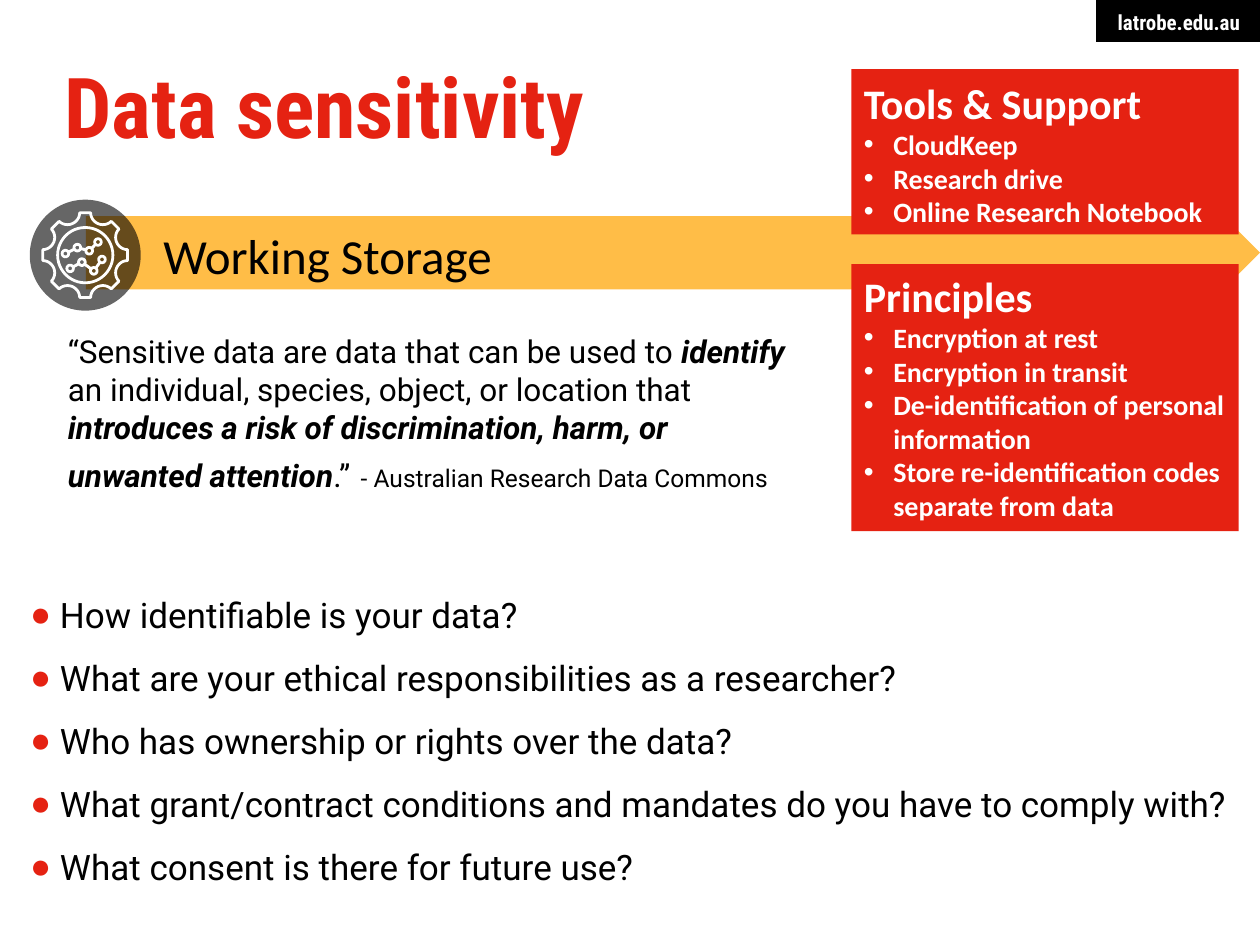
import math
from dataclasses import dataclass, field
from typing import Any

from lxml import etree
from pptx import Presentation
from pptx.dml.color import RGBColor
from pptx.enum.shapes import MSO_SHAPE
from pptx.enum.text import MSO_ANCHOR, PP_ALIGN
from pptx.oxml.ns import qn
from pptx.util import Pt

RECTANGLE, OVAL, ARROW = MSO_SHAPE.RECTANGLE, MSO_SHAPE.OVAL, MSO_SHAPE.RIGHT_ARROW
TOP, BOTTOM = MSO_ANCHOR.TOP, MSO_ANCHOR.BOTTOM
LEFT, CENTER, RIGHT = PP_ALIGN.LEFT, PP_ALIGN.CENTER, PP_ALIGN.RIGHT
COLORS = {"red": "E52212", "amber": "FFBD47", "black": "000000", "white": "FFFFFF"}
ICON_CENTER = (48.7, 145.8)
ICON_LINE = 1.6
NODE_RADIUS, HOLE_RADIUS = 2.7, 1.1
Point = tuple[float, float]


@dataclass
class Box:
    left: float
    top: float
    width: float
    height: float


@dataclass
class TextRun:
    text: str
    size: float
    font: str
    color: str = "black"
    bold: bool = False
    italic: bool = False


@dataclass
class Line:
    runs: list[TextRun]
    bullet: str = ""
    bullet_color: str = ""
    indent: float = 0
    format: dict[str, Any] = field(default_factory=dict)


@dataclass
class Panel:
    box: Box
    heading: str
    items: list[str]
    anchor: Any


def rgb(name: str) -> RGBColor:
    return RGBColor.from_string(COLORS[name])


def lengths(box: Box) -> list[Pt]:
    return [Pt(value) for value in (box.left, box.top, box.width, box.height)]


def circle_box(center: Point, radius: float) -> Box:
    return Box(center[0] - radius, center[1] - radius, 2 * radius, 2 * radius)


def arc(center: Point, radius: float, start: float, sweep: float) -> list[Point]:
    """Return points along an arc; angles are in degrees."""
    angles = [math.radians(start + sweep * step / 12) for step in range(13)]
    return [(center[0] + radius * math.cos(angle), center[1] + radius * math.sin(angle))
            for angle in angles]


def style_shape(shape, fill: str = "", outline: str = "") -> None:
    shape.shadow.inherit = False
    if fill:
        shape.fill.solid()
        shape.fill.fore_color.rgb = rgb(fill)
    else:
        shape.fill.background()
    if outline:
        shape.line.color.rgb = rgb(outline)
        shape.line.width = Pt(ICON_LINE)
    else:
        shape.line.fill.background()


def add_preset(slide, kind, box: Box, fill: str = "", outline: str = ""):
    shape = slide.shapes.add_shape(kind, *lengths(box))
    style_shape(shape, fill, outline)
    return shape


def add_outline(slide, contours: list[list[Point]], fill: str = "", outline: str = "") -> None:
    scaled = [[(Pt(x), Pt(y)) for x, y in contour] for contour in contours]
    builder = slide.shapes.build_freeform(*scaled[0][0])
    for index, contour in enumerate(scaled):
        if index:
            builder.move_to(*contour[0])
        builder.add_line_segments(contour[1:], close=True)
    style_shape(builder.convert_to_shape(), fill, outline)


def add_bullet(paragraph, line: Line) -> None:
    properties = paragraph._p.get_or_add_pPr()
    properties.set("marL", str(Pt(line.indent)))
    properties.set("indent", str(-Pt(line.indent)))
    if line.bullet_color:
        color = etree.SubElement(properties, qn("a:buClr"))
        etree.SubElement(color, qn("a:srgbClr"), val=COLORS[line.bullet_color])
    etree.SubElement(properties, qn("a:buFont"), typeface="Arial")
    etree.SubElement(properties, qn("a:buChar"), char=line.bullet)


def write_text(shape, lines: list[Line], insets=(7.2, 3.6, 7.2, 3.6),
               anchor=TOP, wrap: bool = True) -> None:
    frame = shape.text_frame
    frame.word_wrap, frame.vertical_anchor = wrap, anchor
    for side, inset in zip(("left", "top", "right", "bottom"), insets):
        setattr(frame, f"margin_{side}", Pt(inset))
    for index, line in enumerate(lines):
        paragraph = frame.add_paragraph() if index else frame.paragraphs[0]
        if line.bullet:
            add_bullet(paragraph, line)
        for name, value in {"alignment": LEFT, **line.format}.items():
            setattr(paragraph, name, value)
        for text_run in line.runs:
            run = paragraph.add_run()
            run.text = text_run.text
            values = {"name": text_run.font, "size": Pt(text_run.size),
                      "bold": text_run.bold, "italic": text_run.italic}
            for name, value in values.items():
                setattr(run.font, name, value)
            run.font.color.rgb = rgb(text_run.color)


def add_text(slide, box: Box, lines: list[Line], **options) -> None:
    write_text(slide.shapes.add_textbox(*lengths(box)), lines, **options)


def add_panel(slide, panel: Panel) -> None:
    lines = [Line([TextRun(panel.heading, 24, "Calibri", "white", True)])]
    lines += [Line([TextRun(item, 16, "Calibri", "white", True)], "•", indent=16.9)
              for item in panel.items]
    write_text(add_preset(slide, RECTANGLE, panel.box, "red"), lines, anchor=panel.anchor)


def add_gear(slide, teeth: int = 8) -> None:
    """Outline a gear whose notches are arcs bulging towards its centre."""
    points = []
    for tooth in range(teeth):
        direction = 360 * (tooth + 0.5) / teeth
        notch = arc(ICON_CENTER, 26.4, direction, 0)[0]
        points += arc(notch, 7, direction + 246, -132)
    add_outline(slide, [points], outline="white")


def add_trend(slide, nodes: list[Point], gap: float = 18) -> None:
    """Trace rings joined by bars, there and back, then cut out the holes."""
    route = nodes + nodes[-2:0:-1]
    silhouette = []
    for index, (x, y) in enumerate(route):
        before, after = route[index - 1], route[(index + 1) % len(route)]
        start = math.degrees(math.atan2(before[1] - y, before[0] - x))
        end = math.degrees(math.atan2(after[1] - y, after[0] - x))
        sweep = (end - start) % 360 or 360
        silhouette += arc((x, y), NODE_RADIUS, start + gap, sweep - 2 * gap)
    holes = [arc(node, HOLE_RADIUS, 360, -360) for node in nodes]
    add_outline(slide, [silhouette, *holes], fill="white")


def add_icon(slide) -> None:
    disc = add_preset(slide, OVAL, circle_box(ICON_CENTER, 31.7), "black")
    color = disc._element.spPr.find(qn("a:solidFill"))[0]
    etree.SubElement(color, qn("a:alpha"), val="60000")
    add_gear(slide)
    add_preset(slide, OVAL, circle_box(ICON_CENTER, 15.8), outline="white")
    add_trend(slide, [(40.1, 153.4), (46.8, 149.8), (53.6, 154.8), (58.3, 148.3)])
    add_trend(slide, [(37.4, 144.9), (44.2, 141.5), (51, 143.3), (56, 138.3)])


QUOTE = [
    TextRun("“Sensitive data are data that can be used to ", 18, "Roboto"),
    TextRun("identify", 18, "Roboto", bold=True, italic=True),
    TextRun(" an individual, species, object, or location that ", 18, "Roboto"),
    TextRun("introduces a risk of discrimination, harm, or unwanted attention",
            18, "Roboto", bold=True, italic=True),
    TextRun(".”", 18, "Roboto"),
    TextRun(" ", 24, "Roboto"),
    TextRun("- Australian Research Data Commons", 14, "Roboto"),
]
QUESTIONS = [
    "How identifiable is your data?",
    "What are your ethical responsibilities as a researcher?",
    "Who has ownership or rights over the data?",
    "What grant/contract conditions and mandates do you have to comply with?",
    "What consent is there for future use?",
]
PANELS = [
    Panel(Box(486.5, 150.9, 221.3, 152.6), "Principles",
          ["Encryption at rest", "Encryption in transit",
           "De-identification of personal information",
           "Store re-identification codes separate from data"], TOP),
    Panel(Box(486.5, 39.5, 221.3, 94.5), "Tools & Support",
          ["CloudKeep", "Research drive", "Online Research Notebook"], BOTTOM),
]


def main() -> None:
    presentation = Presentation()
    presentation.slide_width, presentation.slide_height = Pt(720), Pt(540)
    slide = presentation.slides.add_slide(presentation.slide_layouts[6])
    no_insets = (0, 0, 0, 0)
    address = TextRun("latrobe.edu.au", 12, "Roboto Condensed", "white", True)
    write_text(add_preset(slide, RECTANGLE, Box(626.4, 0, 93.6, 24), "black"),
               [Line([address], format={"alignment": RIGHT})],
               insets=(11.3, 5.5, 11.3, 3.6), wrap=False)
    arrow = add_preset(slide, ARROW, Box(49, 123.5, 671, 41.8), "amber")
    arrow.adjustments[0], arrow.adjustments[1] = 1, 0.5
    add_text(slide, Box(82, 128.9, 210.2, 33.8),
             [Line([TextRun("Working Storage", 28, "Calibri")], format={"alignment": CENTER})],
             insets=no_insets)
    add_icon(slide)
    title = TextRun("Data sensitivity", 48, "Roboto Condensed", "red", True)
    add_text(slide, Box(36.9, 33.8, 646.6, 66.2),
             [Line([title], format={"line_spacing": Pt(55)})], insets=no_insets)
    add_text(slide, Box(31.7, 186.2, 430.6, 133.9), [Line(QUOTE)])
    add_text(slide, Box(17.3, 326.9, 702.7, 187.9),
             [Line([TextRun(question, 20, "Roboto")], "●", "red", 17, {"line_spacing": 1.5})
              for question in QUESTIONS], insets=no_insets)
    for panel in PANELS:
        add_panel(slide, panel)
    presentation.save("out.pptx")


if __name__ == "__main__":
    main()
